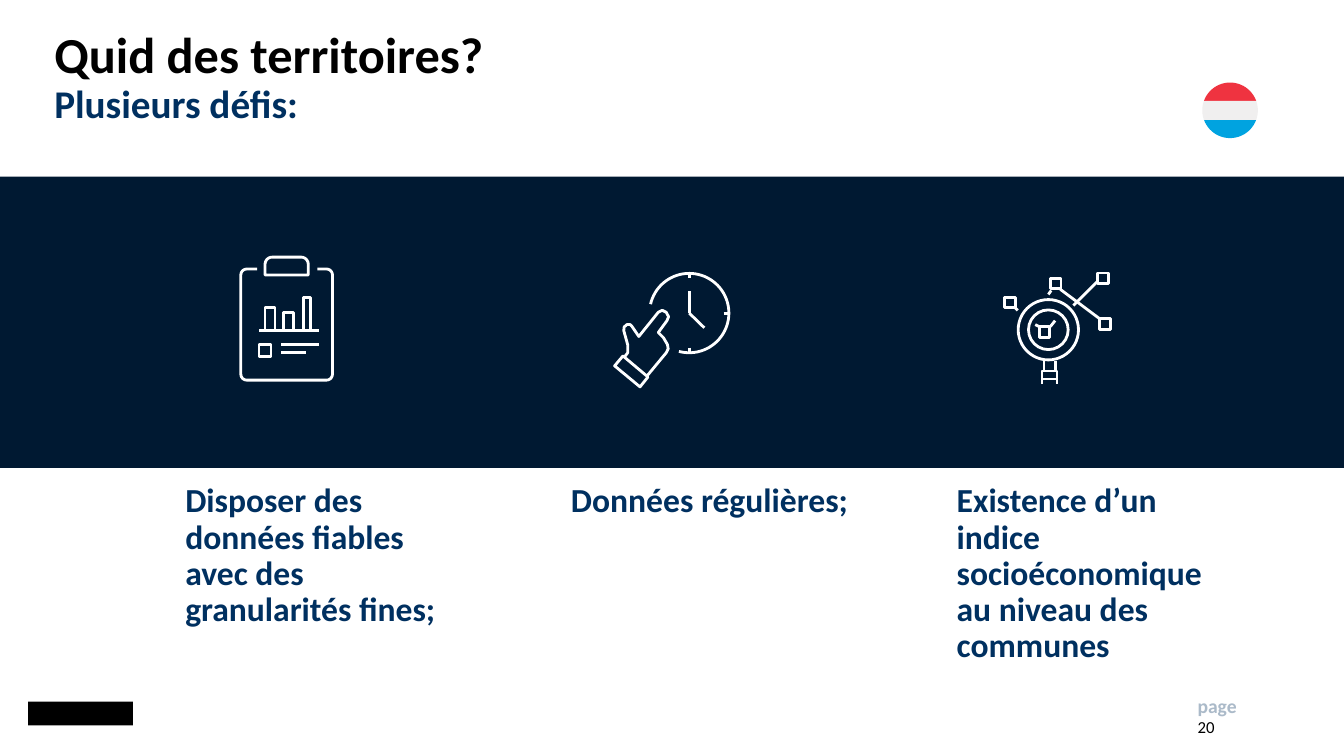
"""Build the slide on the challenges of territorial data."""
from math import cos, radians, sin

from lxml.etree import SubElement
from pptx import Presentation
from pptx.dml.color import RGBColor
from pptx.enum.shapes import MSO_CONNECTOR, MSO_SHAPE
from pptx.enum.text import MSO_ANCHOR
from pptx.oxml.ns import qn
from pptx.util import Cm, Pt

COLOURS = {
    "black": "000000", "white": "FFFFFF", "navy": "003060", "band": "001932",
    "page": "ABBAC9", "red": "EF3340", "pale": "F0EFEF", "blue": "00A3E0",
}


def add_text(text, left, top, width, height, size, colour="navy", bold=True,
             anchor=MSO_ANCHOR.TOP, spacing=1.0, before=0):
    """Add a text box and return its paragraph."""
    box = slide.shapes.add_textbox(Cm(left), Cm(top), Cm(width), Cm(height))
    frame = box.text_frame
    frame.word_wrap = True
    frame.vertical_anchor = anchor
    frame.margin_left = frame.margin_right = frame.margin_top = frame.margin_bottom = 0
    paragraph = frame.paragraphs[0]
    paragraph.text = text
    paragraph.line_spacing = spacing
    paragraph.space_before = Pt(before)
    for run in paragraph.runs:
        run.font.name = "Calibri"
        run.font.size = Pt(size)
        run.font.bold = bold
        run.font.color.rgb = RGBColor.from_string(COLOURS[colour])
    return paragraph


def arc(x, y, radius, start, end, steps=24):
    """Return points along an arc, with angles in degrees clockwise from the right."""
    angles = [radians(start + (end - start) * i / steps) for i in range(steps + 1)]
    return [(x + radius * cos(a), y + radius * sin(a)) for a in angles]


presentation = Presentation()
presentation.slide_width = Cm(33.87)
presentation.slide_height = Cm(19.05)
slide = presentation.slides.add_slide(presentation.slide_layouts[6])

for colour, left, top, width, height in [
    ("black", 0.71, 17.68, 2.64, 0.6),
    ("band", 0, 4.45, 33.87, 7.34),
]:
    block = slide.shapes.add_shape(
        MSO_SHAPE.RECTANGLE, Cm(left), Cm(top), Cm(width), Cm(height))
    block.shadow.inherit = False
    block.fill.solid()
    block.fill.fore_color.rgb = RGBColor.from_string(COLOURS[colour])
    block.line.fill.background()

heading = add_text("Quid des territoires? \vPlusieurs défis:", 1.37, 0.43, 31.06, 3.1, 36,
                   colour="black", anchor=MSO_ANCHOR.MIDDLE, spacing=0.9, before=10)
subtitle = heading.runs[1].font
subtitle.size = Pt(28)
subtitle.color.rgb = RGBColor.from_string(COLOURS["navy"])

challenges = [
    "Disposer des données fiables avec des granularités fines;",
    "Données régulières;",
    "Existence d’un indice socioéconomique au niveau des communes",
]
for column, challenge in enumerate(challenges):
    add_text(challenge, 4.67 + 9.72 * column, 12.19, 7.01, 5.49, 24, spacing=0.9, before=10)

add_text("page", 30.18, 17.48, 1.5, 0.51, 14, colour="page")
add_text("20", 30.18, 18.06, 1.7, 0.71, 12, colour="black", bold=False)

flag = (31, 2.78, 0.7)
clipboard = [
    (8, 6.78), *arc(8.23, 6.93, 0.15, -90, 0, 6), *arc(8.23, 9.43, 0.15, 0, 90, 6),
    *arc(6.22, 9.43, 0.15, 90, 180, 6), *arc(6.22, 6.93, 0.15, 180, 270, 6), (6.48, 6.78),
]
clip = [(7.77, 6.93), (6.68, 6.93),
        *arc(6.86, 6.66, 0.18, 180, 270, 6), *arc(7.59, 6.66, 0.18, -90, 0, 6)]
bars = [[(left, 8.33), (left, top), (right, top), (right, 8.33)]
        for left, right, top in [(6.68, 6.93, 7.75), (7.14, 7.39, 7.87), (7.65, 7.82, 7.49)]]
hand = [
    (15.72, 9.02), (15.82, 8.89), (15.82, 8.69), (15.72, 8.33), (15.73, 8.24), (15.8, 8.18),
    (15.88, 8.18), (15.93, 8.23), (16.1, 8.48), (16.59, 7.87), (16.69, 7.82), (16.79, 7.87),
    (16.85, 7.98), (16.81, 8.08), (16.59, 8.38), (16.72, 8.51), (16.82, 8.68), (16.84, 8.79),
    (16.79, 8.89), (16.31, 9.47),
]
cuff = [(16.33, 9.5), (16.13, 9.75), (15.49, 9.22), (15.7, 8.97)]
clock = arc(17.37, 7.89, 1, 105, -167, 60)
handle = [(26.26, 9.68), (26.26, 9.35), (26.64, 9.35), (26.64, 9.68)]

outlines = [
    (arc(*flag, 20, 160), True, "blue"),
    (arc(*flag, 200, 340), True, "red"),
    (arc(*flag, -20, 20) + arc(*flag, 160, 200), True, "pale"),
    (clipboard, False, None), (clip, True, None), (hand, False, None),
    (cuff, True, None), (clock, False, None), (handle, False, None),
    *[(bar, False, None) for bar in bars],
]
strokes = []
for points, closed, colour in outlines:
    corners = [(Cm(x), Cm(y)) for x, y in points]
    builder = slide.shapes.build_freeform(*corners[0])
    builder.add_line_segments(corners[1:], close=closed)
    outline = builder.convert_to_shape()
    outline.shadow.inherit = False
    if colour:
        outline.fill.solid()
        outline.fill.fore_color.rgb = RGBColor.from_string(COLOURS[colour])
        outline.line.fill.background()
    else:
        outline.fill.background()
        strokes.append(outline)

lens = [(MSO_SHAPE.OVAL, 26.42 - radius, 8.31 - radius, 2 * radius) for radius in (0.76, 0.5)]
nodes = [(MSO_SHAPE.RECTANGLE, left, top, 0.27) for left, top in [
    (26.47, 7.01), (27.71, 8.03), (27.66, 6.88), (26.19, 8.23), (25.32, 7.49)]]
checkbox = (MSO_SHAPE.RECTANGLE, 6.53, 8.69, 0.3)
for kind, left, top, side in [*lens, *nodes, checkbox]:
    part = slide.shapes.add_shape(kind, Cm(left), Cm(top), Cm(side), Cm(side))
    part.shadow.inherit = False
    part.fill.background()
    strokes.append(part)

report_lines = [(7.09, 8.69, 8.03, 8.69), (7.09, 8.89, 7.7, 8.89), (6.53, 8.33, 8.03, 8.33)]
clock_lines = [
    (17.37, 7.89, 17.37, 7.34), (17.75, 8.26, 17.37, 7.89), (18.24, 7.89, 18.36, 7.89),
    (17.37, 6.88, 17.37, 7.01), (17.37, 8.76, 17.37, 8.89),
]
magnifier_lines = [
    (26.26, 9.55, 26.64, 9.55), (26.31, 9.09, 26.31, 9.35), (26.59, 9.09, 26.59, 9.35),
    (27.05, 7.7, 27.64, 7.11), (26.47, 8.23, 26.59, 8.08), (26.72, 7.29, 27.71, 8.03),
    (26.09, 8.18, 26.19, 8.23), (25.58, 7.75, 25.65, 7.82), (26.42, 7.42, 26.49, 7.32),
]
segments = []
for ends in report_lines + clock_lines + magnifier_lines:
    segments.append(slide.shapes.add_connector(
        MSO_CONNECTOR.STRAIGHT, *[Cm(length) for length in ends]))

for stroke in strokes + segments:
    stroke.line.color.rgb = RGBColor.from_string(COLOURS["white"])
    stroke.line.width = Pt(2)
for segment in segments:
    SubElement(segment._element.spPr, qn("a:effectLst"))

presentation.save("out.pptx")
